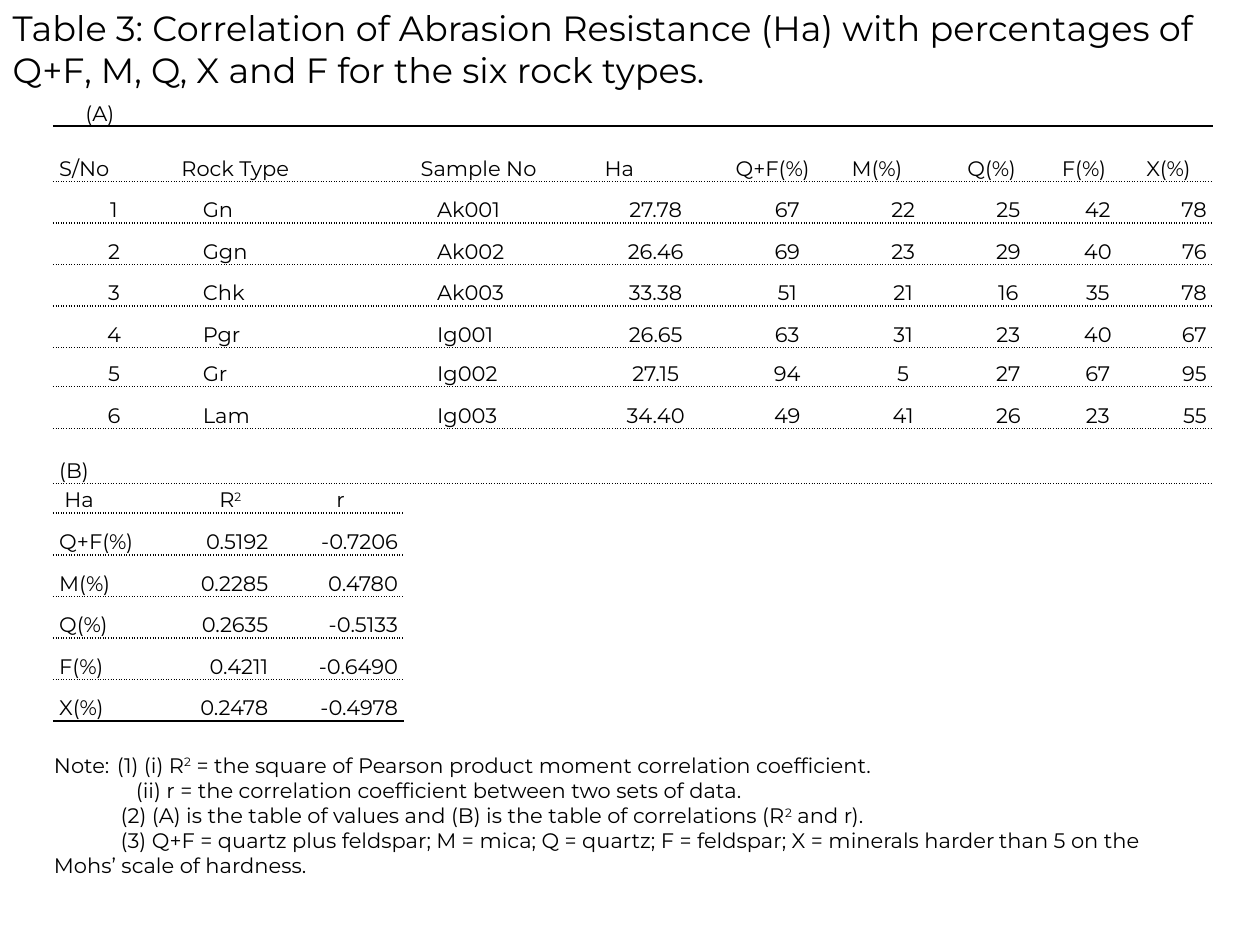
from lxml import etree
from pptx import Presentation
from pptx.dml.color import RGBColor
from pptx.enum import text
from pptx.oxml import ns
from pptx.util import Inches, Pt

BLACK = RGBColor(0, 0, 0)
FONT = "Montserrat"
LEFT, CENTER, RIGHT = text.PP_ALIGN.LEFT, text.PP_ALIGN.CENTER, text.PP_ALIGN.RIGHT

TITLE = ("Table 3: Correlation of Abrasion Resistance (Ha) with percentages of "
         "Q+F, M, Q, X and F for the six rock types.")
COLUMN_WIDTHS = [0.83, 0.09, 0.79, 1.03, 0.08, 1.33, 1.17, 0.92, 0.92, 0.75, 0.67, 0.58]
SECTION_ROW = 7
ROW_HEIGHTS = [0.44, 0.33, 0.33, 0.33, 0.33, 0.31, 0.33, 0.44, 0.22] + [0.33] * 5

# First and last grid column of each field in the two parts of the table
VALUE_SPANS = [(0, 1), (2, 4)] + [(col, col) for col in range(5, 12)]
CORRELATION_SPANS = [(0, 0), (1, 2), (3, 3), (4, 11)]

VALUE_HEADERS = ["S/No", "Rock Type", "Sample No", "Ha", "Q+F(%)", "M(%)", "Q(%)", "F(%)", "X(%)"]
VALUES = [
    ["1", "Gn", "Ak001", "27.78", "67", "22", "25", "42", "78"],
    ["2", "Ggn", "Ak002", "26.46", "69", "23", "29", "40", "76"],
    ["3", "Chk", "Ak003", "33.38", "51", "21", "16", "35", "78"],
    ["4", "Pgr", "Ig001", "26.65", "63", "31", "23", "40", "67"],
    ["5", "Gr", "Ig002", "27.15", "94", "5", "27", "67", "95"],
    ["6", "Lam", "Ig003", "34.40", "49", "41", "26", "23", "55"],
]
CORRELATION_HEADERS = ["Ha", "R²", "r", ""]
CORRELATIONS = [
    ["Q+F(%)", "0.5192", "-0.7206", ""],
    ["M(%)", "0.2285", "0.4780", ""],
    ["Q(%)", "0.2635", "-0.5133", ""],
    ["F(%)", "0.4211", "-0.6490", ""],
    ["X(%)", "0.2478", "-0.4978", ""],
]

# Alignment and left indent of each field
VALUE_HEADER_FORMATS = [(LEFT, 0)] * 3 + [(LEFT, 0.13)] + [(LEFT, 0)] * 5
VALUE_FORMATS = [(CENTER, 0), (LEFT, 0.17), (LEFT, 0.13)] + [(CENTER, 0)] * 5 + [(RIGHT, 0)]
CORRELATION_HEADER_FORMATS = [(LEFT, 0.04), (LEFT, 0.44), (LEFT, 0.44), (LEFT, 0)]
CORRELATION_FORMATS = [(LEFT, 0), (RIGHT, 0), (RIGHT, 0), (LEFT, 0)]

# Text, first-line indent and tab stop
NOTES = [
    ("Note:\t(1) (i) R² = the square of Pearson product moment correlation coefficient.", 0, 0.53),
    ("(ii) r = the correlation coefficient between two sets of data.", 0.65, None),
    ("(2) (A) is the table of values and (B) is the table of correlations (R² and r).", 0.53, None),
    ("(3) Q+F = quartz plus feldspar; M = mica; Q = quartz; F = feldspar; "
     "X = minerals harder\tthan 5 on the Mohs’ scale of hardness.", 0.53, 7.81),
]


def add_child(parent, tag, **attributes):
    return etree.SubElement(parent, ns.qn(tag), {key: str(val) for key, val in attributes.items()})


def write(paragraph, words, size=12):
    """Fill a paragraph, raising each ² as a superscript 2."""
    for i, part in enumerate(words.split("²")):
        for piece in (["2"] if i else []) + ([part] if part else []):
            run = paragraph.add_run()
            run.text = piece
            run.font.size, run.font.name = Pt(size), FONT
            run.font.color.rgb = BLACK
        if i:
            raised = paragraph.runs[-2 if part else -1]
            raised.font._element.set("baseline", "30000")


def edge_style(edge, col):
    """Dash of the horizontal rule above row number edge, or None."""
    if col >= 4 and edge > SECTION_ROW + 1:
        return None
    return "solid" if edge in (0, len(ROW_HEIGHTS)) else "dot"


def format_cell(cell, row, col):
    cell.margin_left = cell.margin_right = Inches(0.05)
    cell.margin_top = cell.margin_bottom = 0
    cell.vertical_anchor = text.MSO_ANCHOR.BOTTOM
    properties = cell._tc.get_or_add_tcPr()
    edges = {"a:lnL": None, "a:lnR": None,
             "a:lnT": edge_style(row, col), "a:lnB": edge_style(row + 1, col)}
    for tag, dash in edges.items():
        line = add_child(properties, tag, w=Pt(1))
        if dash:
            add_child(add_child(line, "a:solidFill"), "a:srgbClr", val=BLACK)
            add_child(line, "a:prstDash", val=dash)
        else:
            add_child(line, "a:noFill")
    cell.fill.background()
    add_child(cell.text_frame.paragraphs[0]._p, "a:endParaRPr", sz=1200)


def fill_row(table, row, fields, spans, formats):
    for words, (first, last), (align, indent) in zip(fields, spans, formats):
        cell = table.cell(row, first)
        if last > first:
            cell.merge(table.cell(row, last))
        paragraph = cell.text_frame.paragraphs[0]
        paragraph.alignment, paragraph.line_spacing = align, 1.15
        paragraph._p.get_or_add_pPr().set("marL", str(Inches(indent)))
        write(paragraph, words)


def add_rock_table(slide, left, top):
    table = slide.shapes.add_table(
        len(ROW_HEIGHTS), len(COLUMN_WIDTHS), left, top,
        Inches(sum(COLUMN_WIDTHS)), Inches(sum(ROW_HEIGHTS))).table
    table.first_row = table.horz_banding = False
    for column, width in zip(table.columns, COLUMN_WIDTHS):
        column.width = Inches(width)
    for r, (row, height) in enumerate(zip(table.rows, ROW_HEIGHTS)):
        row.height = Inches(height)
        for c, cell in enumerate(row.cells):
            format_cell(cell, r, c)

    fill_row(table, 0, VALUE_HEADERS, VALUE_SPANS, VALUE_HEADER_FORMATS)
    for r, fields in enumerate(VALUES, 1):
        fill_row(table, r, fields, VALUE_SPANS, VALUE_FORMATS)
    fill_row(table, SECTION_ROW, ["(B)"], [(0, 11)], [(LEFT, 0)])
    fill_row(table, SECTION_ROW + 1, CORRELATION_HEADERS, CORRELATION_SPANS,
             CORRELATION_HEADER_FORMATS)
    for r, fields in enumerate(CORRELATIONS, SECTION_ROW + 2):
        fill_row(table, r, fields, CORRELATION_SPANS, CORRELATION_FORMATS)


def place_title(title, left, top, width, height):
    title.left, title.top, title.width, title.height = left, top, width, height
    frame = title.text_frame
    frame.auto_size = text.MSO_AUTO_SIZE.NONE
    frame.vertical_anchor = text.MSO_ANCHOR.TOP
    frame.paragraphs[0].alignment = LEFT
    write(frame.paragraphs[0], TITLE, 20)


def add_section_label(slide, left, top, width, height):
    frame = slide.shapes.add_textbox(left, top, width, height).text_frame
    frame.word_wrap = False
    write(frame.paragraphs[0], "(A)")


def add_notes(slide, left, top, width, height):
    frame = slide.shapes.add_textbox(left, top, width, height).text_frame
    frame.word_wrap = True
    for i, (words, indent, tab) in enumerate(NOTES):
        paragraph = frame.add_paragraph() if i else frame.paragraphs[0]
        properties = paragraph._p.get_or_add_pPr()
        properties.set("marL", "0")
        properties.set("indent", str(Inches(indent)))
        if tab:
            add_child(add_child(properties, "a:tabLst"), "a:tab", pos=Inches(tab), algn="l")
        write(paragraph, words)


def main():
    deck = Presentation()
    deck.slide_width, deck.slide_height = Inches(10), Inches(7.5)
    slide = deck.slides.add_slide(deck.slide_layouts[5])
    place_title(slide.shapes.title, 0, 0, Inches(10), Inches(0.77))
    add_rock_table(slide, Inches(0.42), Inches(1))
    add_section_label(slide, Inches(0.58), Inches(0.75), Inches(0.46), Inches(0.3))
    add_notes(slide, Inches(0.33), Inches(5.92), Inches(8.92), Inches(1.11))
    deck.save("out.pptx")


if __name__ == "__main__":
    main()
